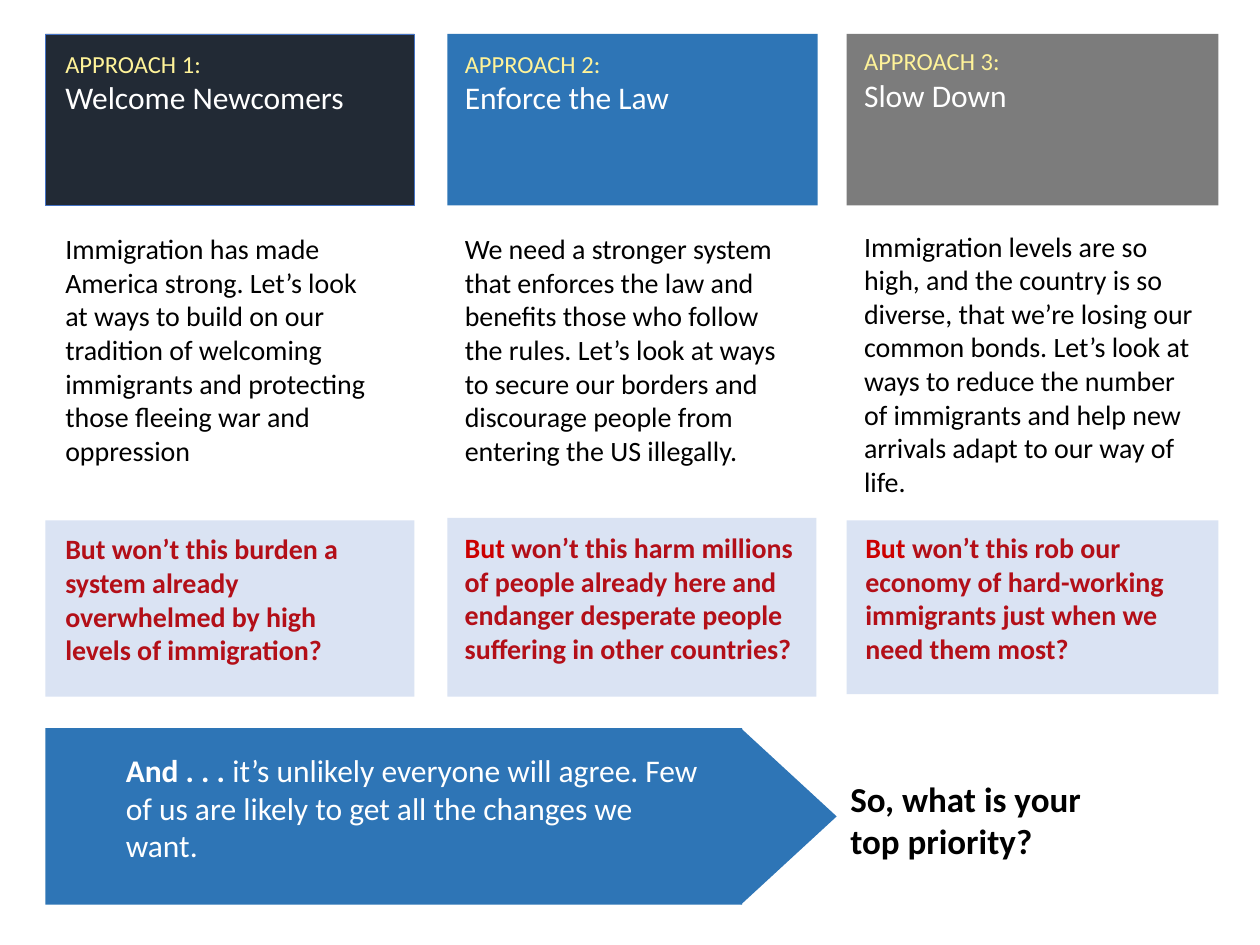
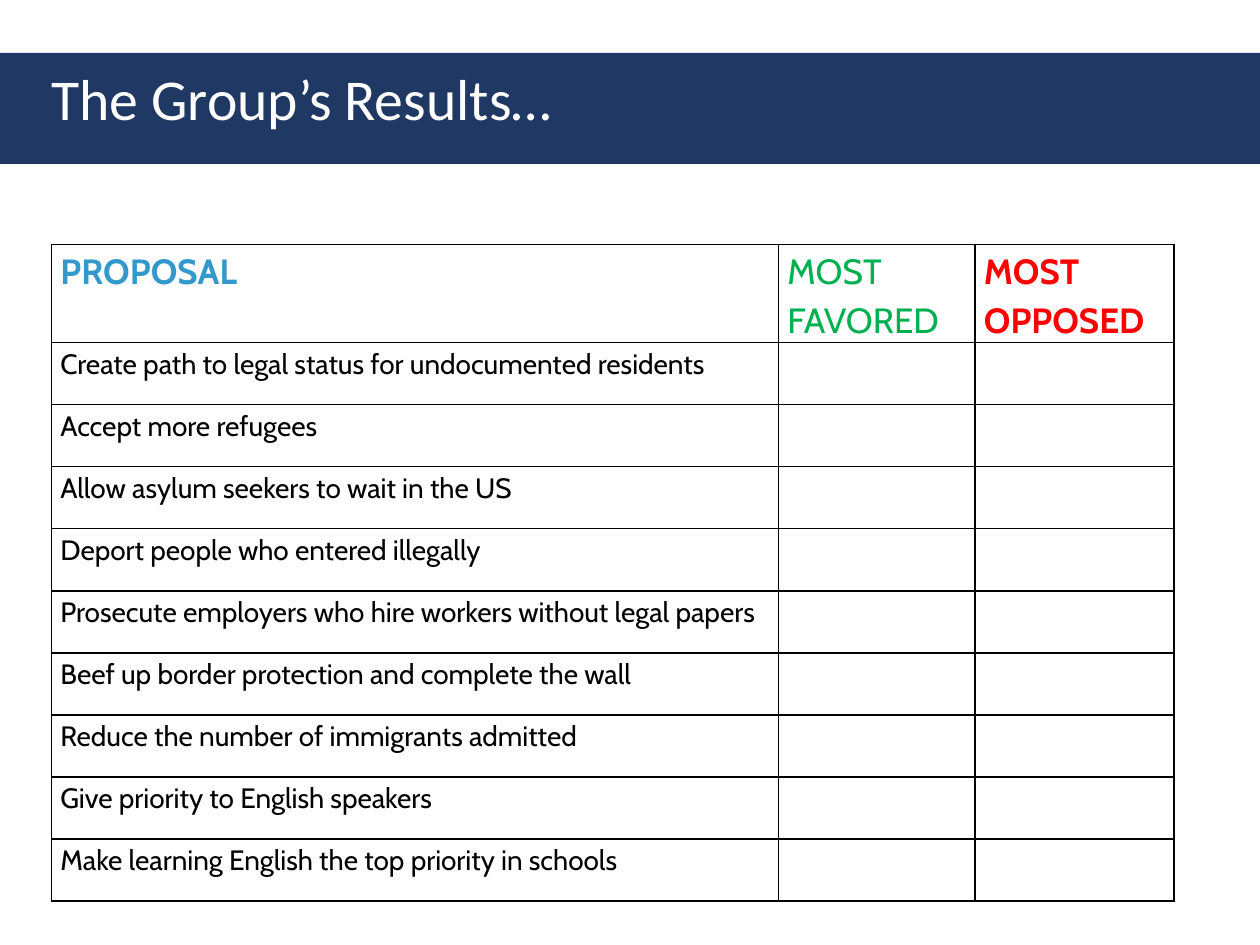
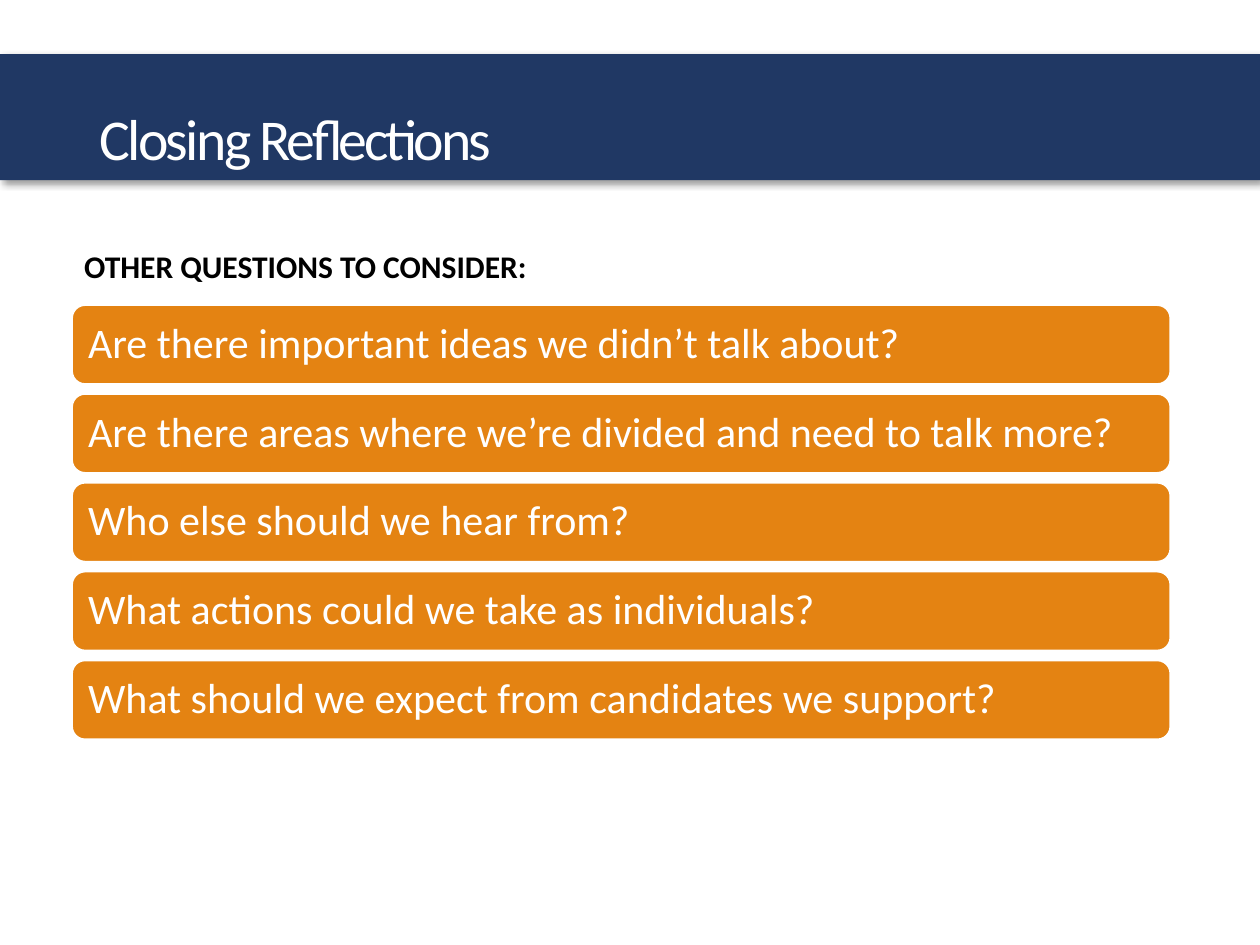
from pptx import Presentation
from pptx.dml.color import RGBColor
from pptx.enum.shapes import MSO_SHAPE
from pptx.enum.text import MSO_ANCHOR, PP_ALIGN
from pptx.oxml import parse_xml
from pptx.oxml.ns import nsdecls, qn
from pptx.util import Inches, Pt

RECTANGLE = MSO_SHAPE.RECTANGLE
ROUNDED = MSO_SHAPE.ROUNDED_RECTANGLE
TRIANGLE = MSO_SHAPE.ISOSCELES_TRIANGLE
TOP, MIDDLE = MSO_ANCHOR.TOP, MSO_ANCHOR.MIDDLE
LEFT = PP_ALIGN.LEFT

WHITE, BLACK = "FFFFFF", "000000"
NAVY, BLUE, PALE_BLUE = "203864", "2E75B6", "DAE3F3"
YELLOW, RED, DARK_RED, ORANGE = "FFF399", "CC0000", "B30F18", "E48312"
TITLE = {"size": 33, "color": WHITE}
color_of = RGBColor.from_string


def add_box(page, at, kind=None, fill=None, line=None, line_width=1, anchor=TOP):
    place = [Inches(length) for length in at]
    if kind is None:
        box = page.shapes.add_textbox(*place)
    else:
        box = page.shapes.add_shape(kind, *place)
        box.shadow.inherit = False
        box.fill.solid()
        box.fill.fore_color.rgb = color_of(fill)
        if line:
            box.line.color.rgb = color_of(line)
            box.line.width = Pt(line_width)
        else:
            box.line.fill.background()
    box.text_frame.word_wrap = True
    box.text_frame.vertical_anchor = anchor
    box.text_frame.paragraphs[0].alignment = LEFT
    return box


def add_span(para, text, size, color, bold=False, font="Calibri", leading=None):
    span = para.add_run()
    span.text = text
    span.font.size = Pt(size)
    span.font.bold = bold
    span.font.name = font
    span.font.color.rgb = color_of(color)
    if leading:
        para.line_spacing = leading
    return span


deck = Presentation()
deck.slide_width, deck.slide_height = Inches(10), Inches(7.5)
blank = deck.slide_layouts[6]

page = deck.slides.add_slide(blank)
approaches = [
    {
        "name": "Welcome Newcomers",
        "header": (0.36, 0.27, 2.93, 1.36), "fill": "222A35", "line": "4472C4",
        "text_at": (0.42, 0.34, 2.66, 3.7),
        "view": "Immigration has made America strong. Let’s look at ways to build on our "
                "tradition of welcoming immigrants and protecting those fleeing war and oppression",
        "panel": (0.36, 4.13, 2.93, 1.4),
        "question_at": (0.42, 4.13, 2.76, 1.25),
        "but_color": DARK_RED,
        "question": " won’t this burden a system already overwhelmed by high levels of immigration?",
    },
    {
        "name": "Enforce the Law",
        "header": (3.55, 0.27, 2.94, 1.36), "fill": BLUE, "line": None,
        "text_at": (3.59, 0.34, 2.68, 3.43),
        "view": "We need a stronger system that enforces the law and benefits those who follow "
                "the rules. Let’s look at ways to secure our borders and discourage people from "
                "entering the US illegally.",
        "panel": (3.55, 4.11, 2.93, 1.42),
        "question_at": (3.59, 4.14, 2.9, 1.21),
        "but_color": RED,
        "question": " won’t this harm millions of people already here and endanger desperate "
                    "people suffering in other countries?",
    },
    {
        "name": "Slow Down",
        "header": (6.72, 0.27, 2.95, 1.36), "fill": "7C7C7C", "line": None,
        "text_at": (6.76, 0.32, 2.83, 3.7),
        "view": "Immigration levels are so high, and the country is so diverse, that we’re "
                "losing our common bonds. Let’s look at ways to reduce the number of immigrants "
                "and help new arrivals adapt to our way of life.",
        "panel": (6.72, 4.13, 2.95, 1.38),
        "question_at": (6.77, 4.06, 2.83, 1.37),
        "but_color": RED,
        "question": " won’t this rob our economy of hard-working immigrants just when we need "
                    "them most?",
    },
]
for number, approach in enumerate(approaches, 1):
    add_box(page, approach["header"], RECTANGLE, approach["fill"], approach["line"], 0.5)
    add_box(page, approach["panel"], RECTANGLE, PALE_BLUE)

    frame = add_box(page, approach["text_at"]).text_frame
    add_span(frame.paragraphs[0], f"APPROACH {number}:", size=14, color=YELLOW)
    add_span(frame.add_paragraph(), approach["name"], size=18, color=WHITE)
    para = frame.add_paragraph()
    para.space_before = Pt(66)
    add_span(para, approach["view"], size=16, color=BLACK)

    para = add_box(page, approach["question_at"], anchor=MIDDLE).text_frame.paragraphs[0]
    add_span(para, "But", size=16, color=approach["but_color"], bold=True)
    add_span(para, approach["question"], size=16, color=DARK_RED, bold=True)

add_box(page, (0.36, 5.78, 5.53, 1.4), RECTANGLE, BLUE)
arrow_tip = add_box(page, (5.56, 6.1, 1.4, 0.76), TRIANGLE, BLUE)
arrow_tip.rotation = 90
para = add_box(page, (0.9, 5.91, 4.83, 1.31)).text_frame.paragraphs[0]
add_span(para, "And . . .", size=18, color=WHITE, bold=True)
add_span(para, " it’s unlikely everyone will agree. Few of us are likely to get all the "
               "changes we want.", size=18, color=WHITE)
frame = add_box(page, (6.65, 6.12, 2.73, 0.77)).text_frame
add_span(frame.paragraphs[0], "So, what is your", size=20, color=BLACK, bold=True)
add_span(frame.add_paragraph(), "top priority?", size=20, color=BLACK, bold=True)

page = deck.slides.add_slide(blank)
add_box(page, (0, 0.42, 10, 0.88), RECTANGLE, NAVY)
title = add_box(page, (0.31, 0.42, 9, 0.77), anchor=MIDDLE)
add_span(title.text_frame.paragraphs[0], "The Group’s Results…", leading=0.9, **TITLE)

headings = [
    ("PROPOSAL", "3399CC", True, 5.77),
    ("MOST FAVORED", "00B050", False, 1.56),
    ("MOST OPPOSED", "FF0000", True, 1.58),
]
proposals = [
    "Create path to legal status for undocumented residents",
    "Accept more refugees",
    "Allow asylum seekers to wait in the US",
    "Deport people who entered illegally",
    "Prosecute employers who hire workers without legal papers",
    "Beef up border protection and complete the wall",
    "Reduce the number of immigrants admitted",
    "Give priority to English speakers",
    "Make learning English the top priority in schools",
]
table = page.shapes.add_table(
    len(proposals) + 1, len(headings), Inches(0.41), Inches(1.94), Inches(8.91), Inches(5.21)
).table
table.first_row = table.horz_banding = False
for row in table.rows:
    row.height = Inches(4.43 / len(proposals))
table.rows[0].height = Inches(0.78)
for cell in table.iter_cells():
    cell.margin_left = cell.margin_right = Inches(0.07)
    cell.margin_top = cell.margin_bottom = 0
    for side in ("lnL", "lnR", "lnT", "lnB"):
        cell._tc.get_or_add_tcPr().append(parse_xml(
            f'<a:{side} {nsdecls("a")} w="{Pt(1)}"><a:solidFill>'
            f'<a:srgbClr val="{BLACK}"/></a:solidFill></a:{side}>'))
    cell.fill.background()
for index, (heading, color, bold, width) in enumerate(headings):
    table.columns[index].width = Inches(width)
    add_span(table.cell(0, index).text_frame.paragraphs[0], heading, size=20, color=color,
             bold=bold, font="Cabin", leading=1.15)
for index, proposal in enumerate(proposals, 1):
    add_span(table.cell(index, 0).text_frame.paragraphs[0], proposal, size=16, color=BLACK,
             font="Cabin", leading=1.15)

page = deck.slides.add_slide(blank)
band = add_box(page, (0, 0.43, 10, 1), RECTANGLE, NAVY)
band._element.spPr.find(qn("a:effectLst")).append(parse_xml(
    f'<a:outerShdw {nsdecls("a")} blurRad="{Pt(4)}" dist="{Pt(3)}" dir="2700000">'
    f'<a:srgbClr val="{BLACK}"><a:alpha val="40000"/></a:srgbClr></a:outerShdw>'))
title = add_box(page, (0.69, 0.4, 8.62, 1.45), anchor=MIDDLE)
span = add_span(title.text_frame.paragraphs[0], "Closing Reflections", leading=0.9, **TITLE)
span.font._element.set("spc", "-150")
label = add_box(page, (0.57, 1.91, 7.2, 0.4))
add_span(label.text_frame.paragraphs[0], "OTHER QUESTIONS TO CONSIDER:", size=18, color=BLACK,
         bold=True)

questions = [
    "Are there important ideas we didn’t talk about?",
    "Are there areas where we’re divided and need to talk more?",
    "Who else should we hear from?",
    "What actions could we take as individuals?",
    "What should we expect from candidates we support?",
]
first_top, last_top = 2.42, 5.24
step = (last_top - first_top) / (len(questions) - 1)
for index, question in enumerate(questions):
    bar = add_box(page, (0.57, first_top + index * step, 8.72, 0.63), ROUNDED, ORANGE,
                  WHITE, 1.25, MIDDLE)
    add_span(bar.text_frame.paragraphs[0], question, size=24, color=WHITE, leading=0.9)

deck.save("out.pptx")
